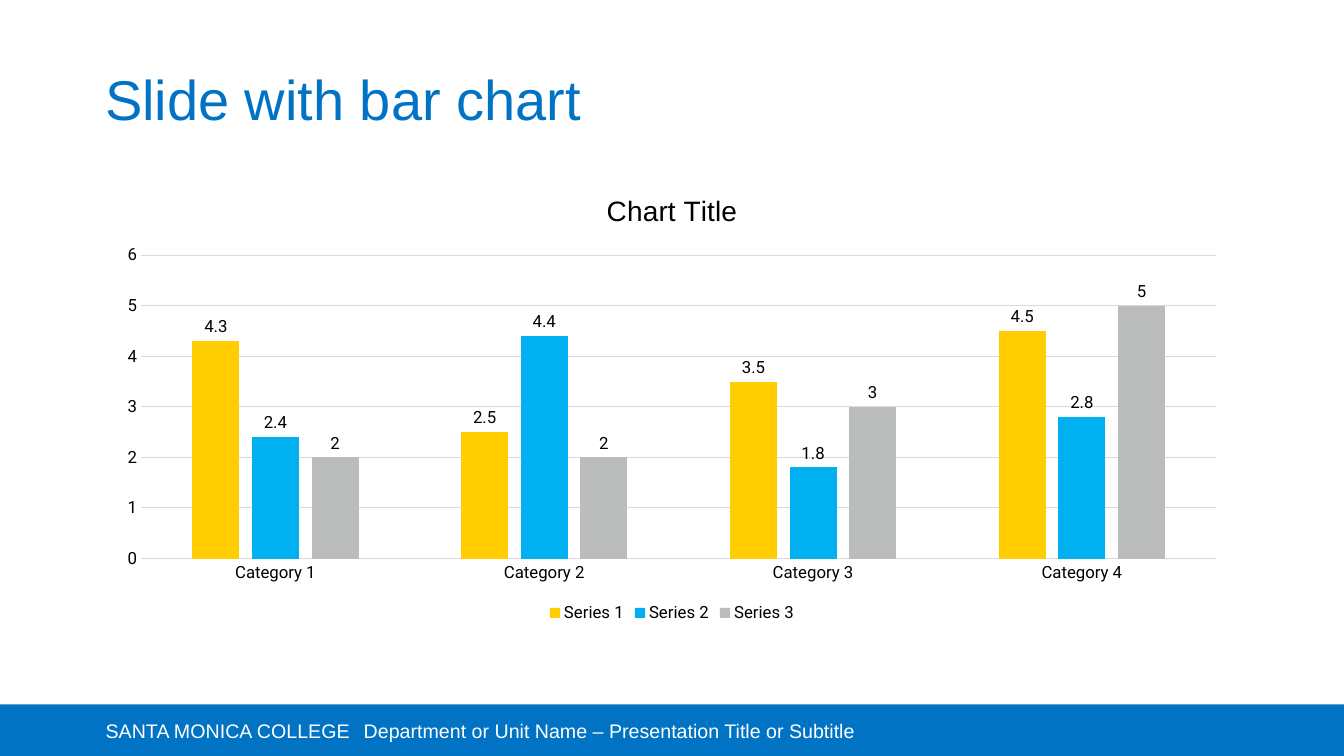
"""Build a slide with a clustered bar chart above a footer band."""
from dataclasses import dataclass

import pptx
import pptx.chart.data
import pptx.dml.color
import pptx.enum.chart
import pptx.enum.shapes
import pptx.enum.text
import pptx.util

Pt = pptx.util.Pt
COLORS = {
    "blue": "0073C5",
    "white": "FFFFFF",
    "black": "000000",
    "grid": "D9D9D9",
    "yellow": "FFCD00",
    "sky": "00B0F0",
    "gray": "BBBCBC",
}


@dataclass
class Label:
    text: str
    left: float
    top: float
    width: float
    height: float
    size: float
    color: str
    inset: float = 7.2
    spacing: float = 1.0


@dataclass
class Series:
    name: str
    values: tuple[float, ...]
    color: str


LABELS = [
    Label("SANTA MONICA COLLEGE", 68.4, 504, 651, 36, 14, "white"),
    Label("Slide with bar chart", 75, 39, 810, 68.4, 40, "blue", inset=0, spacing=0.9),
    Label("Department or Unit Name – Presentation Title or Subtitle",
          252.7, 504, 466.6, 36, 14, "white"),
]
CATEGORIES = [f"Category {n}" for n in range(1, 5)]
SERIES = [
    Series("Series 1", (4.3, 2.5, 3.5, 4.5), "yellow"),
    Series("Series 2", (2.4, 4.4, 1.8, 2.8), "sky"),
    Series("Series 3", (2, 2, 3, 5), "gray"),
]


def rgb(name: str) -> pptx.dml.color.RGBColor:
    return pptx.dml.color.RGBColor.from_string(COLORS[name])


def set_font(font, *, size: float = 12, name: str = "Roboto", color: str = "black") -> None:
    font.size = Pt(size)
    font.name = name
    font.bold = False
    font.color.rgb = rgb(color)


def add_text(tf, text: str, *, size: float, color: str, spacing: float = 1.0) -> None:
    p = tf.paragraphs[0]
    p.line_spacing = spacing
    r = p.add_run()
    r.text = text
    set_font(r.font, size=size, name="Arial", color=color)


def add_label(s, label: Label) -> None:
    sp = s.shapes.add_textbox(Pt(label.left), Pt(label.top), Pt(label.width), Pt(label.height))
    tf = sp.text_frame
    tf.word_wrap = True
    tf.vertical_anchor = pptx.enum.text.MSO_ANCHOR.MIDDLE
    tf.margin_left = tf.margin_right = Pt(label.inset)
    tf.margin_top = tf.margin_bottom = Pt(label.inset / 2)
    add_text(tf, label.text, size=label.size, color=label.color, spacing=label.spacing)


def add_footer_band(s) -> None:
    sp = s.shapes.add_shape(pptx.enum.shapes.MSO_SHAPE.RECTANGLE,
                            Pt(0), Pt(503.2), Pt(960), Pt(36.8))
    sp.shadow.inherit = False
    sp.fill.solid()
    sp.fill.fore_color.rgb = rgb("blue")
    sp.line.fill.background()


def style_axis(axis) -> None:
    axis.major_tick_mark = axis.minor_tick_mark = pptx.enum.chart.XL_TICK_MARK.NONE
    set_font(axis.tick_labels.font)


def style_line(line) -> None:
    line.color.rgb = rgb("grid")
    line.width = Pt(0.75)


def add_bar_chart(s) -> None:
    data = pptx.chart.data.CategoryChartData()
    data.categories = CATEGORIES
    for series in SERIES:
        data.add_series(series.name, series.values)
    chart = s.shapes.add_chart(pptx.enum.chart.XL_CHART_TYPE.COLUMN_CLUSTERED,
                               Pt(75), Pt(123.8), Pt(810), Pt(324), data).chart
    set_font(chart.font, size=10)
    chart.has_title = True
    add_text(chart.chart_title.text_frame, "Chart Title", size=20, color="black")
    chart.chart_title.include_in_layout = False

    chart.has_legend = True
    chart.legend.position = pptx.enum.chart.XL_LEGEND_POSITION.BOTTOM
    chart.legend.include_in_layout = False
    set_font(chart.legend.font)

    style_axis(chart.category_axis)
    style_line(chart.category_axis.format.line)
    values = chart.value_axis
    style_axis(values)
    values.minimum_scale, values.maximum_scale, values.major_unit = 0, 6, 1
    values.format.line.fill.background()
    style_line(values.major_gridlines.format.line)

    plot = chart.plots[0]
    plot.gap_width, plot.overlap = 219, -27
    plot.vary_by_categories = False
    for bars, series in zip(plot.series, SERIES):
        bars.format.fill.solid()
        bars.format.fill.fore_color.rgb = rgb(series.color)
        bars.invert_if_negative = False
        labels = bars.data_labels
        labels.show_value = True
        labels.position = pptx.enum.chart.XL_LABEL_POSITION.OUTSIDE_END
        set_font(labels.font)


def main() -> None:
    prs = pptx.Presentation()
    prs.slide_width, prs.slide_height = Pt(960), Pt(540)
    s = prs.slides.add_slide(prs.slide_layouts[6])
    add_footer_band(s)
    for label in LABELS:
        add_label(s, label)
    add_bar_chart(s)
    prs.save("out.pptx")


if __name__ == "__main__":
    main()
